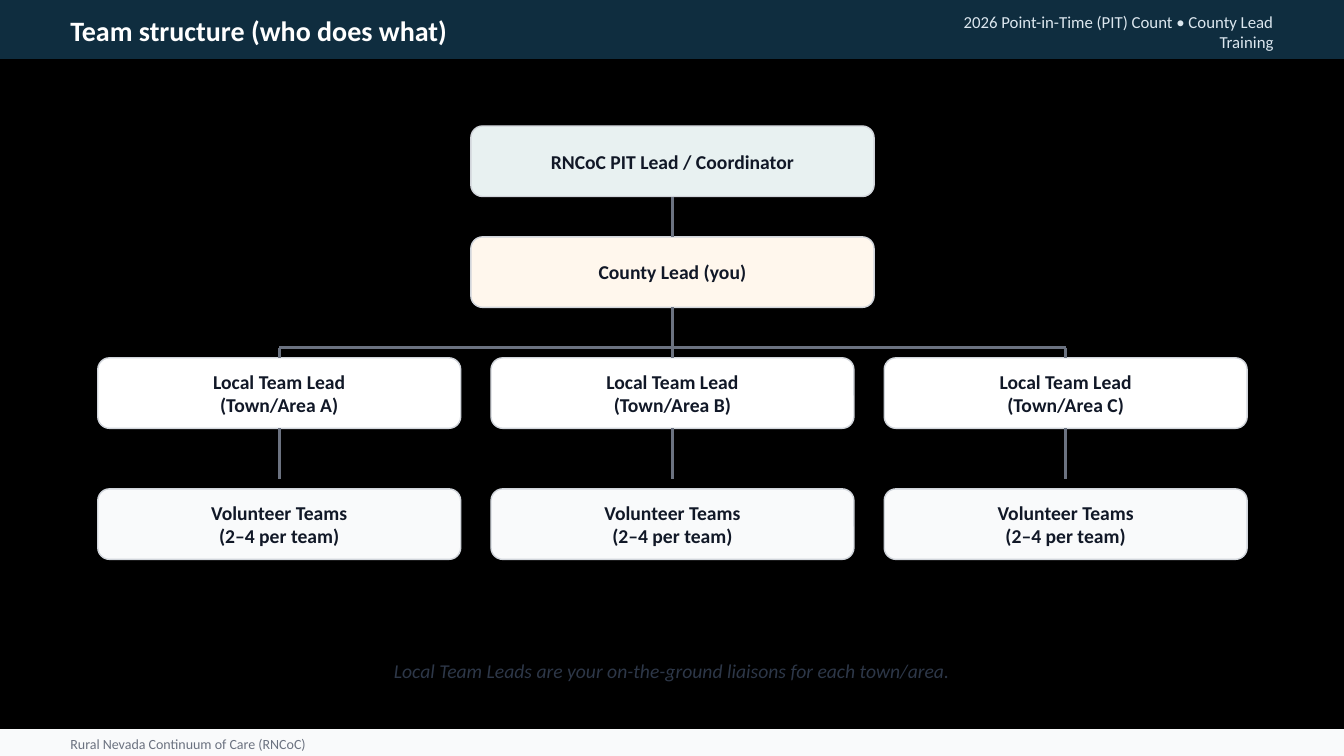
from lxml import etree
from pptx import Presentation
from pptx.dml.color import RGBColor
from pptx.enum.shapes import MSO_CONNECTOR as Conn, MSO_SHAPE as Shape
from pptx.enum.text import MSO_ANCHOR as Anchor, PP_ALIGN as Align
from pptx.oxml import parse_xml
from pptx.oxml.ns import qn
from pptx.util import Inches, Pt

NAVY = RGBColor(0x0F, 0x2D, 0x3F)
BLACK = RGBColor(0, 0, 0)
WHITE = RGBColor(0xFF, 0xFF, 0xFF)
MIST = RGBColor(0xDC, 0xE7, 0xEF)
PALE = RGBColor(0xF9, 0xFA, 0xFB)
GRAY = RGBColor(0x6B, 0x72, 0x80)
EDGE = RGBColor(0xD1, 0xD5, 0xDB)
INK = RGBColor(0x11, 0x18, 0x27)
SLATE = RGBColor(0x2D, 0x37, 0x48)
TEAL = RGBColor(0xE8, 0xF1, 0xF1)
CREAM = RGBColor(0xFF, 0xF7, 0xED)

SHADOW = (
    '<a:effectLst xmlns:a="http://schemas.openxmlformats.org/drawingml/2006/main">'
    '<a:outerShdw blurRad="25400" dist="13970" dir="2700000" algn="bl" rotWithShape="0">'
    '<a:srgbClr val="000000"><a:alpha val="10000"/></a:srgbClr>'
    '</a:outerShdw></a:effectLst>'
)

deck = Presentation()
deck.slide_width = Inches(13.33)
deck.slide_height = Inches(7.5)
slide = deck.slides.add_slide(deck.slide_layouts[6])
slide.background.fill.solid()
slide.background.fill.fore_color.rgb = BLACK
shapes = slide.shapes


def write(text, x, y, w, h, size=14, color=INK, bold=False, italic=False, align=Align.LEFT):
    frame = shapes.add_textbox(Inches(x), Inches(y), Inches(w), Inches(h)).text_frame
    frame.word_wrap = True
    frame.vertical_anchor = Anchor.MIDDLE
    frame.text = text
    for para in frame.paragraphs:
        para.alignment = align
        font = para.runs[0].font
        font.name, font.size, font.color.rgb = "Calibri", Pt(size), color
        font.bold, font.italic = bold, italic


def block(kind, x, y, w, h, fill, edge):
    shape = shapes.add_shape(kind, Inches(x), Inches(y), Inches(w), Inches(h))
    shape.shadow.inherit = False
    shape.fill.solid()
    shape.fill.fore_color.rgb = fill
    shape.line.color.rgb = edge
    shape.line.width = Pt(1)
    return shape


# Header and footer bands
block(Shape.RECTANGLE, 0, 0, 13.33, 0.58, NAVY, NAVY)
write("Team structure (who does what)", 0.6, 0.13, 8.53, 0.35, size=20, color=WHITE, bold=True)
write("2026 Point-in-Time (PIT) Count • County Lead Training", 9.33, 0.15, 3.4, 0.33,
      size=12, color=MIST, align=Align.RIGHT)
block(Shape.RECTANGLE, 0, 7.24, 13.33, 0.26, PALE, PALE)
write("Rural Nevada Continuum of Care (RNCoC)", 0.6, 7.28, 12.13, 0.2, size=10, color=GRAY)

# Boxes: label, centre, top, width, fill
MID, STEP, TALL, BUS = 6.67, 3.9, 0.7, 3.45
cols = [MID - STEP, MID, MID + STEP]
plan = [("RNCoC PIT Lead / Coordinator", MID, 1.25, 4, TEAL),
        ("County Lead (you)", MID, 2.35, 4, CREAM)]
plan += [(f"Local Team Lead\n(Town/Area {area})", x, 3.55, 3.6, WHITE)
         for area, x in zip("ABC", cols)]
plan += [("Volunteer Teams\n(2–4 per team)", x, 4.85, 3.6, PALE) for x in cols]

boxes = []
for label, x, top, wide, fill in plan:
    left = x - wide / 2
    box = block(Shape.ROUNDED_RECTANGLE, left, top, wide, TALL, fill, EDGE)
    props = box._element.spPr
    props.replace(props.find(qn("a:effectLst")), parse_xml(SHADOW))
    write(label, left + 0.15, top + 0.12, wide - 0.3, 0.46, bold=True, align=Align.CENTER)
    boxes.append(box)
head, county, *leads = boxes[:5]

# Lines: start x and y, end x and y, box above, box below
links = [(MID, 1.95, MID, 2.35, head, county),
         (MID, 3.05, MID, BUS, county, None),
         (cols[0], BUS, cols[2], BUS, None, None)]
links += [(x, BUS, x, 3.55, None, lead) for x, lead in zip(cols, leads)]
links += [(x, 4.25, x, 4.75, lead, None) for x, lead in zip(cols, leads)]
for x1, y1, x2, y2, above, below in links:
    link = shapes.add_connector(Conn.STRAIGHT, Inches(x1), Inches(y1), Inches(x2), Inches(y2))
    link.line.color.rgb = GRAY
    link.line.width = Pt(2)
    etree.SubElement(link._element.spPr, qn("a:effectLst"))
    if above:
        link.begin_connect(above, 2)
    if below:
        link.end_connect(below, 0)

# Closing note
write("Local Team Leads are your on-the-ground liaisons for each town/area.",
      0.6, 6.45, 12.13, 0.4, color=SLATE, italic=True, align=Align.CENTER)

deck.save("out.pptx")
